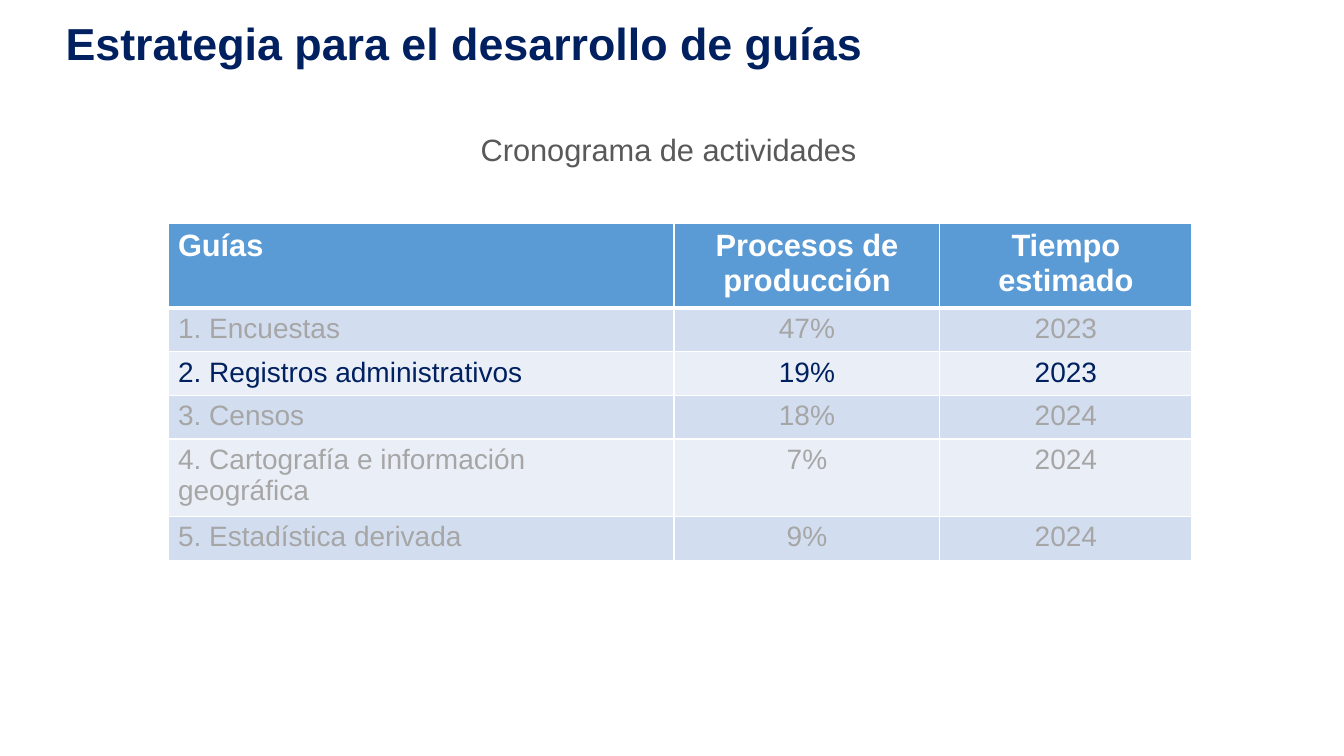
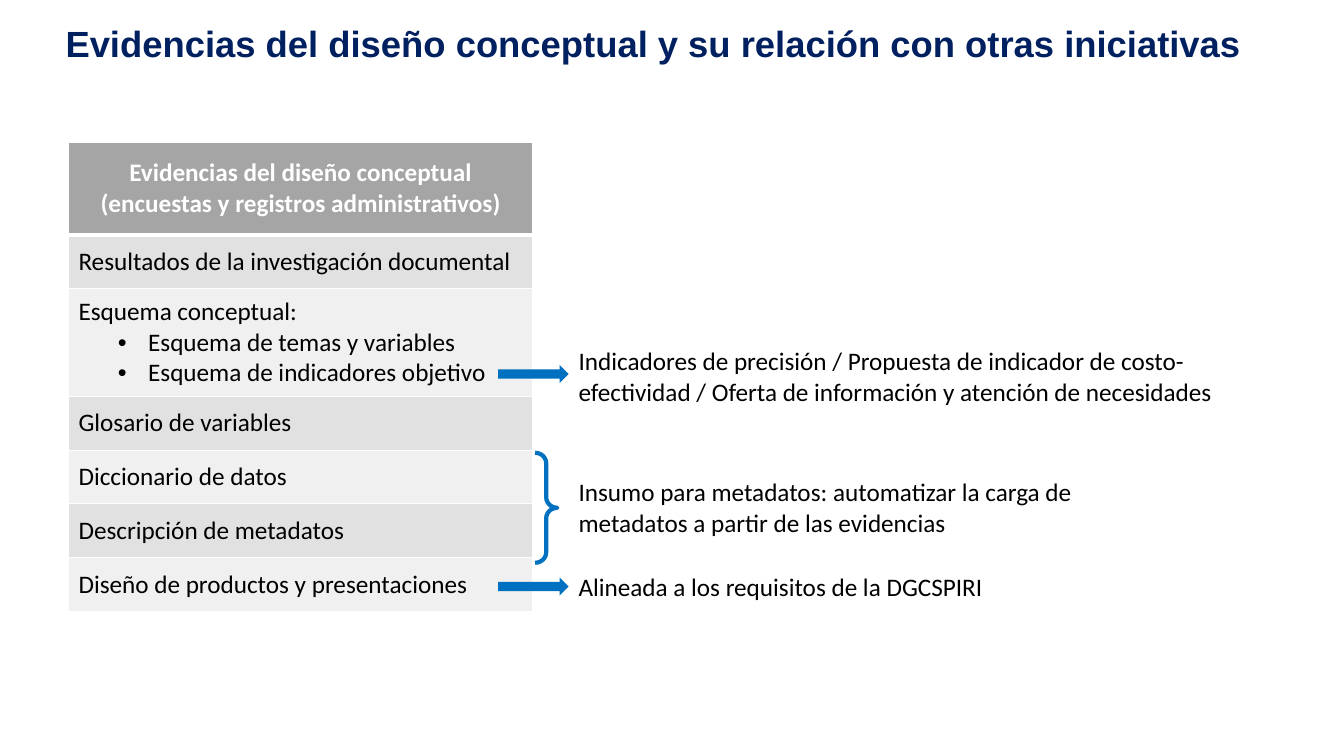
from dataclasses import dataclass

from lxml import etree
from pptx import Presentation
from pptx import util as u
from pptx.dml.color import RGBColor
from pptx.enum import shapes, text
from pptx.oxml import ns

CELL = u.Inches(5) / 12  # the slide is a grid of 32 columns by 18 rows
COLUMNS, ROWS = 32, 18
LEFT, CENTER = text.PP_ALIGN.LEFT, text.PP_ALIGN.CENTER
TOP, MIDDLE = text.MSO_ANCHOR.TOP, text.MSO_ANCHOR.MIDDLE


@dataclass(frozen=True)
class Theme:
    heading_font: str = "Arial"
    body_font: str = "Calibri"
    navy: str = "002060"
    accent: str = "0070C0"
    white: str = "FFFFFF"
    black: str = "000000"
    subtitle: str = "595959"
    muted: str = "A6A6A6"
    blue_table: tuple = ("5B9BD5", "D2DEEF", "EAEFF7")  # header, odd, even
    gray_table: tuple = ("A5A5A5", "E1E1E1", "F0F0F0")
    title_size: int = 32
    long_title_size: int = 26
    head_size: int = 22
    row_size: int = 20
    body_size: int = 18
    hairline: int = 1
    heavy: int = 3


THEME = Theme()


@dataclass(frozen=True)
class Style:
    size: int
    font: str
    color: str
    bold: bool = False


def grid(*cells):
    return [u.Emu(round(n * CELL)) for n in cells]


def rgb(value):
    return RGBColor.from_string(value)


def set_bullet(paragraph):
    properties = paragraph._p.get_or_add_pPr()
    properties.set("marL", str(u.Inches(0.69)))
    properties.set("indent", str(u.Inches(-0.3)))
    etree.SubElement(properties, ns.qn("a:buFont"), typeface="Arial")
    etree.SubElement(properties, ns.qn("a:buChar"), char="•")


def set_borders(cell, top, bottom):
    properties = cell._tc.get_or_add_tcPr()
    widths = {"lnL": THEME.hairline, "lnR": THEME.hairline, "lnT": top, "lnB": bottom}
    for position, (side, width) in enumerate(widths.items()):
        line = etree.Element(ns.qn("a:" + side), w=str(u.Pt(width)))
        fill = etree.SubElement(line, ns.qn("a:solidFill"))
        etree.SubElement(fill, ns.qn("a:srgbClr"), val=THEME.white)
        properties.insert(position, line)


class Deck:
    def __init__(self):
        self.presentation = Presentation()
        self.presentation.slide_width, self.presentation.slide_height = grid(COLUMNS, ROWS)
        self.slide = None

    def add_lines(self, frame, lines, style, align=LEFT):
        """Fill a text frame; a line that starts with a bullet becomes a list item."""
        for index, line in enumerate(lines):
            paragraph = frame.paragraphs[0] if index == 0 else frame.add_paragraph()
            paragraph.alignment = align
            if line.startswith("•"):
                set_bullet(paragraph)
            run = paragraph.add_run()
            run.text = line.removeprefix("•")
            run.font.size, run.font.name = u.Pt(style.size), style.font
            run.font.bold, run.font.color.rgb = style.bold, rgb(style.color)

    def new_slide(self, title, size, top):
        self.slide = self.presentation.slides.add_slide(self.presentation.slide_layouts[5])
        holder = self.slide.shapes.title
        holder.left, holder.top, holder.width, holder.height = grid(1.32, top, 29.04, 1.5)
        frame = holder.text_frame
        frame.auto_size, frame.vertical_anchor = text.MSO_AUTO_SIZE.NONE, TOP
        frame.word_wrap = True
        self.add_lines(frame, [title], Style(size, THEME.heading_font, THEME.navy, True))
        frame.paragraphs[0].line_spacing = 0.9
        frame.paragraphs[0].space_before = u.Pt(0)

    def label(self, box, words, style, align=LEFT):
        frame = self.slide.shapes.add_textbox(*grid(*box)).text_frame
        frame.word_wrap = True
        self.add_lines(frame, [words], style, align)

    def table(self, corner, widths, heights, rows, palette, style_of, align_of, anchor):
        """Draw rows of cells, each cell a list of lines; row 0 is the header."""
        box = grid(*corner, sum(widths), sum(heights))
        table = self.slide.shapes.add_table(len(rows), len(widths), *box).table
        table.horz_banding = False
        for column, width in zip(table.columns, grid(*widths)):
            column.width = width
        for row, height in zip(table.rows, grid(*heights)):
            row.height = height
        header_fill, odd_fill, even_fill = palette
        for r, row in enumerate(rows):
            fill = header_fill if r == 0 else odd_fill if r % 2 else even_fill
            for c, lines in enumerate(row):
                cell = table.cell(r, c)
                cell.fill.solid()
                cell.fill.fore_color.rgb = rgb(fill)
                cell.vertical_anchor = anchor
                set_borders(cell,
                            top=THEME.heavy if r == 1 else THEME.hairline,
                            bottom=THEME.heavy if r == 0 else THEME.hairline)
                self.add_lines(cell.text_frame, lines, style_of(r), align_of(r, c))

    def arrow(self, box):
        arrow = self.slide.shapes.add_shape(shapes.MSO_SHAPE.RIGHT_ARROW, *grid(*box))
        arrow.shadow.inherit = False
        arrow.fill.solid()
        arrow.fill.fore_color.rgb = rgb(THEME.accent)
        arrow.line.fill.background()

    def brace(self, box):
        brace = self.slide.shapes.add_shape(shapes.MSO_SHAPE.RIGHT_BRACE, *grid(*box))
        brace.shadow.inherit = False
        brace.adjustments[0], brace.adjustments[1] = 0.47, 0.5
        brace.fill.background()
        brace.line.color.rgb, brace.line.width = rgb(THEME.accent), u.Pt(THEME.heavy)


def schedule_slide(deck):
    deck.new_slide("Estrategia para el desarrollo de guías", THEME.title_size, top=0.4)
    deck.label((4.58, 3, 22.68, 1.5), "Cronograma de actividades",
               Style(THEME.head_size, THEME.heading_font, THEME.subtitle), CENTER)
    guides = [
        ("Guías", "Procesos de producción", "Tiempo estimado"),
        ("1. Encuestas", "47%", "2023"),
        ("2. Registros administrativos", "19%", "2023"),
        ("3. Censos", "18%", "2024"),
        ("4. Cartografía e información geográfica", "7%", "2024"),
        ("5. Estadística derivada", "9%", "2024"),
    ]
    current_guide = 2
    header = Style(THEME.head_size, THEME.heading_font, THEME.white, True)
    current = Style(THEME.row_size, THEME.heading_font, THEME.navy)
    other = Style(THEME.row_size, THEME.heading_font, THEME.muted)
    deck.table((4, 5.33), (12.05, 6.33, 6), (1.87, 0.98, 0.98, 0.98, 1.73, 0.98),
               [[[words] for words in guide] for guide in guides], THEME.blue_table,
               style_of=lambda r: {0: header, current_guide: current}.get(r, other),
               align_of=lambda r, c: CENTER if c else LEFT, anchor=TOP)


def evidence_slide(deck):
    deck.new_slide("Evidencias del diseño conceptual y su relación con otras iniciativas",
                   THEME.long_title_size, top=0.5)
    evidence = [
        ["Evidencias del diseño conceptual", "(encuestas y registros administrativos)"],
        ["Resultados de la investigación documental"],
        ["Esquema conceptual:", "•Esquema de temas y variables",
         "•Esquema de indicadores objetivo"],
        ["Glosario de variables"],
        ["Diccionario de datos"],
        ["Descripción de metadatos"],
        ["Diseño de productos y presentaciones"],
    ]
    header = Style(THEME.body_size, THEME.body_font, THEME.white, True)
    body = Style(THEME.body_size, THEME.body_font, THEME.black)
    deck.table((1.63, 3.38), (11.06,), (2.21, 1.28, 2.57, 1.28, 1.28, 1.28, 1.28),
               [[lines] for lines in evidence], THEME.gray_table,
               style_of=lambda r: body if r else header,
               align_of=lambda r, c: LEFT if r else CENTER, anchor=MIDDLE)

    initiatives = [  # top, width, height, words
        (8.11, 17.86, 1.7, "Indicadores de precisión / Propuesta de indicador de "
         "costo-efectividad / Oferta de información y atención de necesidades"),
        (11.23, 13.27, 1.7, "Insumo para metadatos: automatizar la carga de metadatos "
         "a partir de las evidencias"),
        (13.49, 17.86, 0.96, "Alineada a los requisitos de la DGCSPIRI"),
    ]
    for top, width, height, words in initiatives:
        deck.label((13.54, top, width, height), words, body)
    for top in (8.69, 13.75):
        deck.arrow((11.86, top, 1.68, 0.43))
    deck.brace((12.74, 10.78, 0.53, 2.62))


def main():
    deck = Deck()
    schedule_slide(deck)
    evidence_slide(deck)
    deck.presentation.save("out.pptx")


if __name__ == "__main__":
    main()
